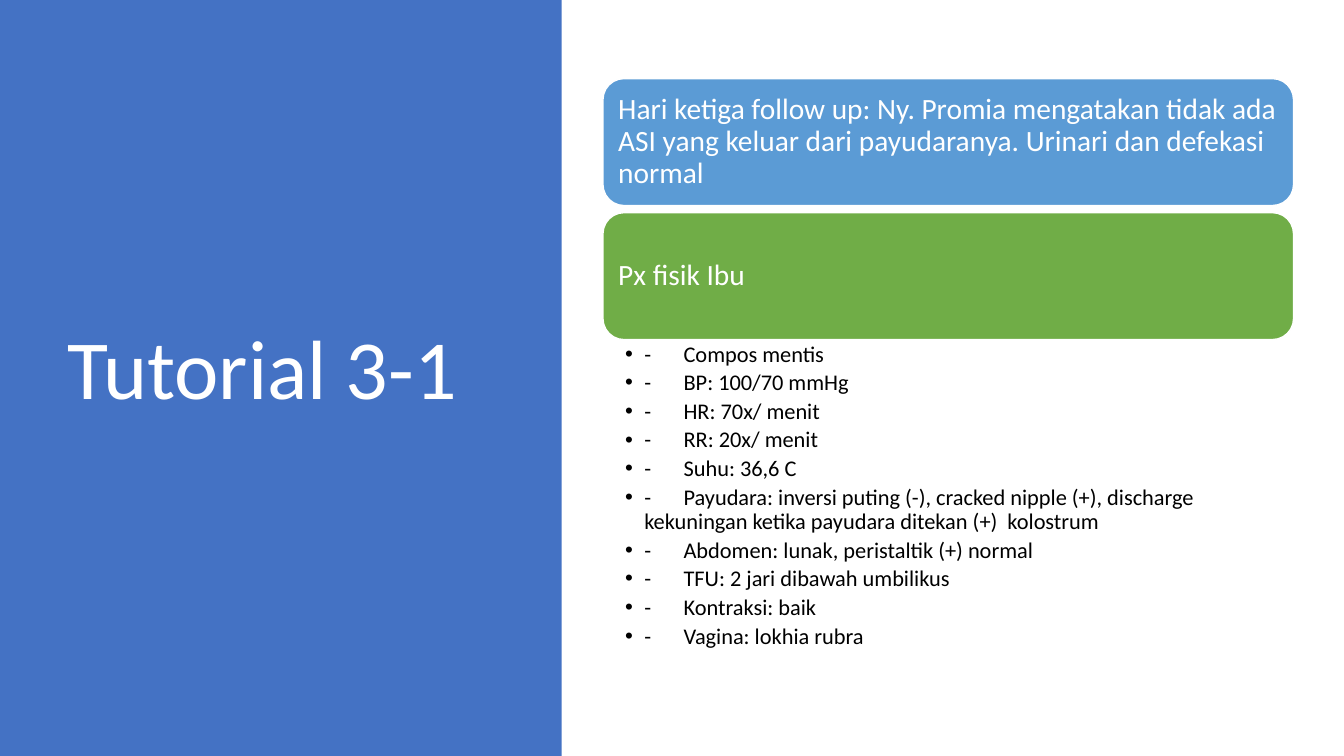
from lxml import etree
from pptx import Presentation
from pptx.dml.color import RGBColor
from pptx.enum.shapes import MSO_SHAPE
from pptx.enum.text import MSO_ANCHOR, PP_ALIGN
from pptx.oxml.ns import qn
from pptx.util import Inches, Pt

RECTANGLE = MSO_SHAPE.RECTANGLE
ROUNDED_RECTANGLE = MSO_SHAPE.ROUNDED_RECTANGLE
MIDDLE = MSO_ANCHOR.MIDDLE
TOP = MSO_ANCHOR.TOP
LEFT = PP_ALIGN.LEFT

WHITE = RGBColor(0xFF, 0xFF, 0xFF)
BLACK = RGBColor(0x00, 0x00, 0x00)
PANEL_BLUE = RGBColor(0x44, 0x72, 0xC4)
CARD_BLUE = RGBColor(0x5B, 0x9B, 0xD5)
CARD_GREEN = RGBColor(0x70, 0xAD, 0x47)

FONT = "Calibri"
BULLET_INDENT = Inches(0.19)
TAB_POSITION = Inches(0.58)
CARD_HEIGHT = 1.26
CARD_PITCH = 1.33

CARDS = [
    ("Hari ketiga follow up: Ny. Promia mengatakan tidak ada ASI yang keluar "
     "dari payudaranya. Urinari dan defekasi normal", CARD_BLUE),
    ("Px fisik Ibu", CARD_GREEN),
]
FINDINGS = [
    "Compos mentis",
    "BP: 100/70 mmHg",
    "HR: 70x/ menit",
    "RR: 20x/ menit",
    "Suhu: 36,6 C",
    "Payudara: inversi puting (-), cracked nipple (+), discharge "
    "kekuningan ketika payudara ditekan (+)  kolostrum",
    "Abdomen: lunak, peristaltik (+) normal",
    "TFU: 2 jari dibawah umbilikus",
    "Kontraksi: baik",
    "Vagina: lokhia rubra",
]


def set_frame(text_frame, anchor, left, top, right, bottom):
    text_frame.word_wrap = True
    text_frame.vertical_anchor = anchor
    text_frame.margin_left = Inches(left)
    text_frame.margin_top = Inches(top)
    text_frame.margin_right = Inches(right)
    text_frame.margin_bottom = Inches(bottom)


def format_paragraph(paragraph, size, color, space_after=0):
    paragraph.alignment = LEFT
    paragraph.line_spacing = 0.9
    paragraph.space_before = Pt(0)
    paragraph.space_after = Pt(space_after)
    for run in paragraph.runs:
        run.font.name = FONT
        run.font.size = Pt(size)
        run.font.color.rgb = color


def add_bullet(paragraph):
    properties = paragraph._p.get_or_add_pPr()
    properties.set("marL", str(BULLET_INDENT))
    properties.set("indent", str(-BULLET_INDENT))
    font = etree.SubElement(properties, qn("a:buFont"))
    font.set("typeface", "Arial")
    bullet = etree.SubElement(properties, qn("a:buChar"))
    bullet.set("char", "•")
    tabs = etree.SubElement(properties, qn("a:tabLst"))
    tab = etree.SubElement(tabs, qn("a:tab"))
    tab.set("pos", str(TAB_POSITION))
    tab.set("algn", "l")


def add_title_panel(slide, left, top, width, height):
    panel = slide.shapes.add_shape(
        RECTANGLE, Inches(left), Inches(top), Inches(width), Inches(height))
    panel.shadow.inherit = False
    panel.fill.solid()
    panel.fill.fore_color.rgb = PANEL_BLUE
    panel.line.fill.background()

    title = slide.shapes.title
    panel._element.addnext(title._element)
    title.left, title.top = Inches(left + 0.57), Inches(top + 0.68)
    title.width, title.height = Inches(4.16), Inches(6.02)
    title.text_frame.text = "Tutorial 3-1"
    set_frame(title.text_frame, MIDDLE, 0.1, 0.05, 0.1, 0.05)
    format_paragraph(title.text_frame.paragraphs[0], 60, WHITE)


def add_card(slide, left, top, width, height, text, color):
    card = slide.shapes.add_shape(
        ROUNDED_RECTANGLE, Inches(left), Inches(top), Inches(width), Inches(height))
    card.shadow.inherit = False
    card.fill.solid()
    card.fill.fore_color.rgb = color
    card.line.color.rgb = WHITE
    card.line.width = Pt(1)
    card.text_frame.text = text
    set_frame(card.text_frame, MIDDLE, 0.09, 0.09, 0.09, 0.09)
    format_paragraph(card.text_frame.paragraphs[0], 21, WHITE)


def add_findings(slide, left, top, width, height):
    box = slide.shapes.add_textbox(
        Inches(left), Inches(top), Inches(width), Inches(height))
    text_frame = box.text_frame
    set_frame(text_frame, TOP, 0.22, 0.03, 0.16, 0.03)
    text_frame.text = "\n".join(f"-\t{finding}" for finding in FINDINGS)
    for paragraph in text_frame.paragraphs:
        format_paragraph(paragraph, 16, BLACK, 3.2)
        add_bullet(paragraph)


def add_content(slide, left, top, width, height):
    for index, (text, color) in enumerate(CARDS):
        add_card(slide, left, top + index * CARD_PITCH, width, CARD_HEIGHT, text, color)
    findings_offset = CARD_PITCH * (len(CARDS) - 1) + CARD_HEIGHT
    add_findings(slide, left, top + findings_offset, width, height - findings_offset)


def main():
    presentation = Presentation()
    presentation.slide_width = Inches(13.33)
    presentation.slide_height = Inches(7.5)
    slide = presentation.slides.add_slide(presentation.slide_layouts[5])
    add_title_panel(slide, 0, 0, 5.57, 7.5)
    add_content(slide, 5.98, 0.78, 6.85, 5.82)
    presentation.save("out.pptx")


if __name__ == "__main__":
    main()
